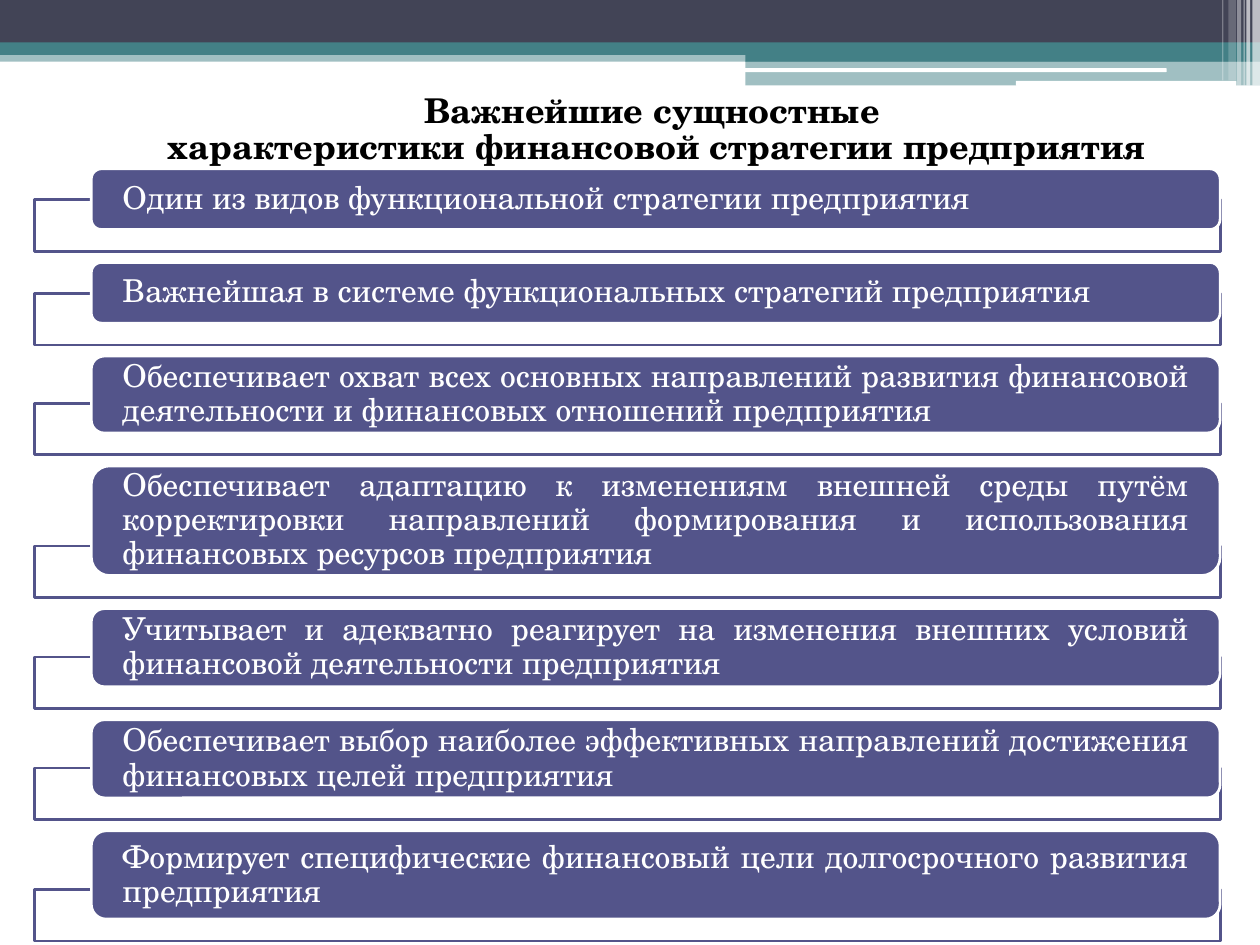
from dataclasses import dataclass

from lxml.etree import SubElement
from pptx import Presentation
from pptx.dml.color import RGBColor as RGB
from pptx.enum.shapes import MSO_SHAPE as Shape
from pptx.enum.text import MSO_ANCHOR as Anchor, MSO_AUTO_SIZE as AutoSize, PP_ALIGN as Align
from pptx.oxml.ns import qn
from pptx.util import Pt


@dataclass(frozen=True)
class Theme:
    font: str = "TeX Gyre Schola"
    dark: str = "424456"
    teal: str = "438086"
    violet: str = "53548A"
    white: str = "FFFFFF"
    black: str = "000000"
    title_size: float = 19.5
    item_size: float = 18


theme = Theme()


def add_panel(kind, left, top, width, height, color, opacity=100, line=None):
    panel = slide.shapes.add_shape(kind, Pt(left), Pt(top), Pt(width), Pt(height))
    panel.shadow.inherit = False
    panel.fill.solid()
    panel.fill.fore_color.rgb = RGB.from_string(color)
    if opacity < 100:
        tint = panel.element.spPr.find(qn("a:solidFill"))[0]
        SubElement(tint, qn("a:alpha")).set("val", str(opacity * 1000))
    if line:
        panel.line.color.rgb = RGB.from_string(line)
        panel.line.width = Pt(1.5)
    else:
        panel.line.fill.background()
    return panel


def format_text(frame, align, size, color, bold=False):
    frame.word_wrap = True
    frame.auto_size = AutoSize.NONE
    frame.vertical_anchor = Anchor.MIDDLE
    for paragraph in frame.paragraphs:
        paragraph.alignment = align
        paragraph.line_spacing = 0.9
        for run in paragraph.runs:
            run.font.name = theme.font
            run.font.size = Pt(size)
            run.font.bold = bold
            run.font.color.rgb = RGB.from_string(color)


deck = Presentation()
deck.slide_width, deck.slide_height = Pt(720), Pt(540)
slide = deck.slides.add_slide(deck.slide_layouts[5])

header_bands = [
    (Shape.RECTANGLE, 0, 28.8, 720, 6.5, theme.teal, 50),
    (Shape.RECTANGLE, 0, 0, 720, 24.5, theme.dark, 100),
    (Shape.RECTANGLE, 0, 24.2, 720, 7.2, theme.teal, 100),
    (Shape.RECTANGLE, 426, 28, 294, 7.2, theme.teal, 100),
    (Shape.RECTANGLE, 426, 34.8, 294, 14, theme.teal, 50),
    (Shape.ROUNDED_RECTANGLE, 425.5, 39, 241.2, 2.2, theme.white, 100),
    (Shape.ROUNDED_RECTANGLE, 580.5, 46.2, 126, 2.9, theme.white, 100),
]
for band in header_bands:
    add_panel(*band)

corner_stripes = [
    (715.7, 4.3, 49, 65),
    (712.2, 2.2, 49, 65),
    (710.6, 0.7, 49, 60),
    (707, 2.2, 49, 40),
    (702, 4.3, 46, 20),
    (698.4, 0.7, 46, 30),
]
for left, width, height, opacity in corner_stripes:
    add_panel(Shape.RECTANGLE, left, 0, width, height, theme.white, opacity)

characteristics = [
    ("Один из видов функциональной стратегии предприятия", 34.6),
    ("Важнейшая в системе функциональных стратегий предприятия", 34.6),
    ("Обеспечивает охват всех основных направлений развития финансовой "
     "деятельности и финансовых отношений предприятия", 43.9),
    ("Обеспечивает адаптацию к изменениям внешней среды путём корректировки "
     "направлений формирования и использования финансовых ресурсов предприятия", 62.6),
    ("Учитывает и адекватно реагирует на изменения внешних условий "
     "финансовой деятельности предприятия", 44.6),
    ("Обеспечивает выбор наиболее эффективных направлений достижения "
     "финансовых целей предприятия", 44.6),
    ("Формирует специфические финансовый цели долгосрочного развития "
     "предприятия", 50.4),
]
card_gap = 18.9
frame_overlap = 17
card_top = 96.5
for wording, card_height in characteristics:
    card_bottom = card_top + card_height
    add_panel(Shape.RECTANGLE, 19.8, card_bottom - frame_overlap, 677.8, 29.5,
              theme.white, 90, theme.violet)
    card = add_panel(Shape.ROUNDED_RECTANGLE, 52.2, card_top, 645, card_height,
                     theme.violet, line=theme.white)
    words = card.text_frame
    words.text = wording
    words.margin_left = words.margin_right = Pt(17.8 - card.adjustments[0] * card_height * 0.29)
    words.margin_top = words.margin_bottom = 0
    format_text(words, Align.JUSTIFY, theme.item_size, theme.white)
    card_top = card_bottom + card_gap

title = slide.shapes.title
title.left, title.top, title.width, title.height = Pt(31), Pt(49), Pt(689), Pt(51)
title.text_frame.text = ""
title.text_frame.paragraphs[0].text = (
    "Важнейшие сущностные \vхарактеристики финансовой стратегии предприятия"
)
format_text(title.text_frame, Align.CENTER, theme.title_size, theme.black, bold=True)

deck.save("out.pptx")
